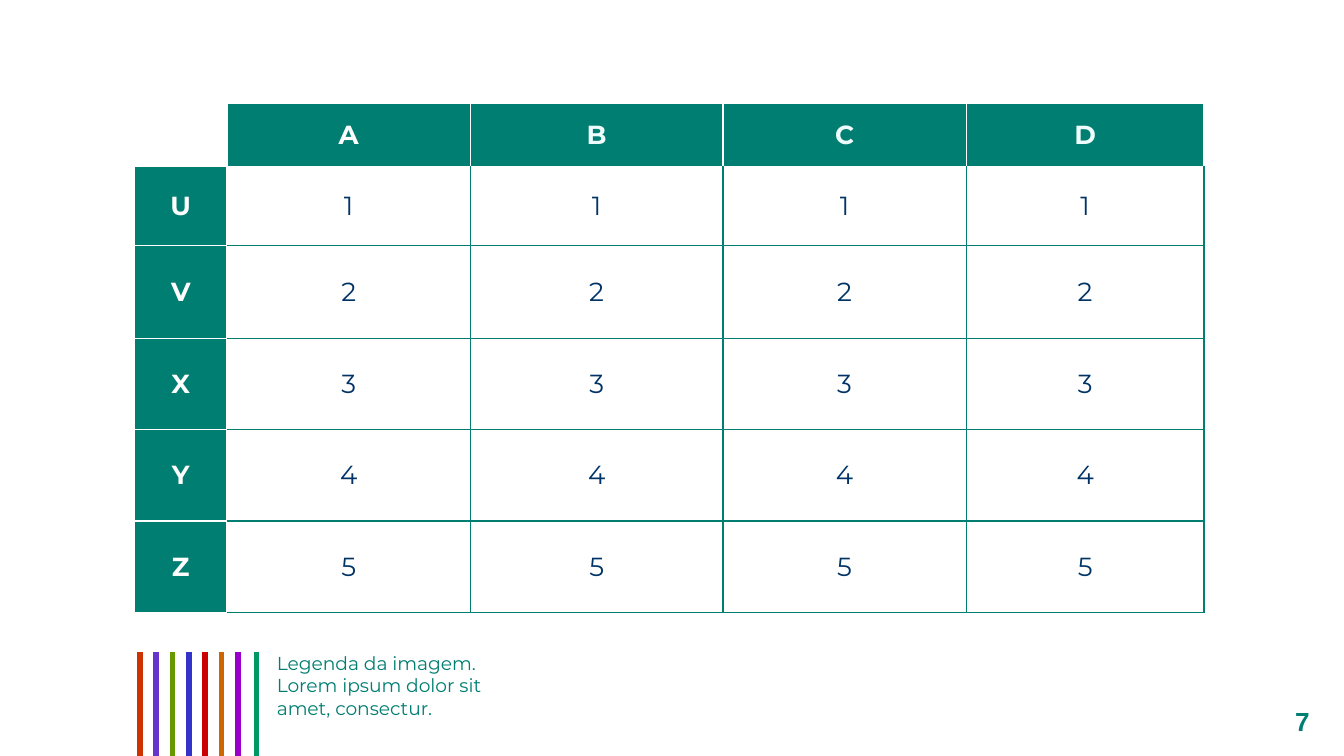
from lxml.etree import SubElement
from pptx import Presentation
from pptx.dml.color import RGBColor
from pptx.enum.shapes import MSO_CONNECTOR as Connector, MSO_SHAPE as Shape
from pptx.enum.text import MSO_ANCHOR as Anchor, PP_ALIGN as Align
from pptx.oxml.ns import qn
from pptx.util import Inches, Pt

TEAL, WHITE, MINT, NAVY = "007E71", "FFFFFF", "EEFCFC", "003366"
COLUMN_WIDTHS = [0.69, 1.81, 1.88, 1.81, 1.77]
ROW_HEIGHTS = [0.44, 0.59, 0.69, 0.68, 0.68, 0.68]
COLUMN_LABELS, ROW_LABELS = "ABCD", "UVXYZ"
STRIPE_COLORS = ["CC3300", "6633CC", "669900", "3333CC", "CC0000", "CC6600", "9900CC"]
LAST_STRIPE_COLOR = "009966"


def color(value):
    """Turn a hex string into a colour."""
    return RGBColor.from_string(value)


def add_run(paragraph, text, size, text_color, font="Montserrat", bold=False):
    """Add one formatted run to a paragraph."""
    run = paragraph.add_run()
    run.text = text
    run.font.size = Pt(size)
    run.font.name = font
    run.font.bold = bold
    run.font.color.rgb = color(text_color)


def set_insets(frame, left, top, right, bottom):
    """Set the four margins of a text frame or a cell."""
    frame.margin_left, frame.margin_top = Inches(left), Inches(top)
    frame.margin_right, frame.margin_bottom = Inches(right), Inches(bottom)


def set_borders(cell, left, right, top, bottom):
    """Draw the four borders of a cell in the given colours."""
    properties = cell._tc.get_or_add_tcPr()
    for side, value in zip("LRTB", (left, right, top, bottom)):
        line = SubElement(properties, qn(f"a:ln{side}"), w=str(Pt(0.75)))
        fill = SubElement(line, qn("a:solidFill"))
        SubElement(fill, qn("a:srgbClr"), val=value)


def format_cell(cell, row, column):
    """Write and format a cell according to its place in the table."""
    set_insets(cell, 0.1, 0.1, 0.1, 0.1)
    cell.vertical_anchor = Anchor.MIDDLE
    paragraph = cell.text_frame.paragraphs[0]
    paragraph.alignment = Align.CENTER
    is_header = row == 0 or column == 0
    if is_header:
        set_borders(cell, WHITE, WHITE, WHITE, WHITE)
        cell.fill.solid()
        cell.fill.fore_color.rgb = color(TEAL if row or column else WHITE)
    else:
        set_borders(cell, WHITE if column == 1 else TEAL, TEAL,
                    WHITE if row == 1 else TEAL, TEAL)
        cell.fill.background()
    if row and column:
        add_run(paragraph, str(row), 14, NAVY)
    elif row:
        add_run(paragraph, ROW_LABELS[row - 1], 14, WHITE, bold=True)
    elif column:
        add_run(paragraph, COLUMN_LABELS[column - 1], 14,
                WHITE if column == 1 else MINT, bold=True)
    else:
        SubElement(paragraph._p, qn("a:endParaRPr"), sz="1600")


def add_data_table(slide, left, top):
    """Add the table with its header row and header column."""
    table = slide.shapes.add_table(
        len(ROW_HEIGHTS), len(COLUMN_WIDTHS), Inches(left), Inches(top),
        Inches(sum(COLUMN_WIDTHS)), Inches(sum(ROW_HEIGHTS))).table
    table.first_row = table.horz_banding = False
    for column, width in zip(table.columns, COLUMN_WIDTHS):
        column.width = Inches(width)
    for row_index, height in enumerate(ROW_HEIGHTS):
        table.rows[row_index].height = Inches(height)
        for column_index in range(len(COLUMN_WIDTHS)):
            format_cell(table.cell(row_index, column_index), row_index, column_index)


def add_stripe(slide, x, top, height, stripe_color):
    """Add one vertical stripe."""
    stripe = slide.shapes.add_connector(
        Connector.STRAIGHT, Inches(x), Inches(top), Inches(x), Inches(top + height))
    stripe.line.color.rgb = color(stripe_color)
    stripe.line.width = Pt(3)
    SubElement(stripe._element.spPr, qn("a:effectLst"))


def add_stripes(slide, left, top, width, height):
    """Add evenly spaced stripes and a last one at the right edge."""
    gap = 0.73 / (len(STRIPE_COLORS) - 1)
    for index, stripe_color in enumerate(STRIPE_COLORS):
        add_stripe(slide, left + index * gap, top, height, stripe_color)
    add_stripe(slide, left + width, top, height, LAST_STRIPE_COLOR)


def add_caption(slide, left, top, width, height):
    """Add the caption beside the stripes."""
    box = slide.shapes.add_textbox(Inches(left), Inches(top), Inches(width), Inches(height))
    frame = box.text_frame
    frame.word_wrap = True
    set_insets(frame, 0, 0, 0, 0.1)
    paragraph = frame.paragraphs[0]
    paragraph.space_after = Pt(10)
    add_run(paragraph, "Legenda da imagem. Lorem ipsum dolor sit amet, consectur.", 10, TEAL)


def add_page_number(slide, left, top, width, height):
    """Add the page number on its white box."""
    box = slide.shapes.add_shape(
        Shape.RECTANGLE, Inches(left), Inches(top), Inches(width), Inches(height))
    box.shadow.inherit = False
    box.fill.solid()
    box.fill.fore_color.rgb = color(WHITE)
    box.line.fill.background()
    frame = box.text_frame
    frame.vertical_anchor = Anchor.MIDDLE
    set_insets(frame, 0.1, 0.1, 0.1, 0.1)
    paragraph = frame.paragraphs[0]
    paragraph.alignment = Align.CENTER
    add_run(paragraph, "7", 14, TEAL, font="Arial", bold=True)


def main():
    """Build the slide and save it."""
    presentation = Presentation()
    presentation.slide_width = Inches(10)
    presentation.slide_height = Inches(10 * 9 / 16)
    slide = presentation.slides.add_slide(presentation.slide_layouts[6])
    add_stripes(slide, 1.04, 4.85, 0.87, 0.78)
    add_page_number(slide, 9.38, 5.1, 0.62, 0.53)
    add_caption(slide, 2.06, 4.85, 1.76, 0.66)
    add_data_table(slide, 1, 0.77)
    presentation.save("out.pptx")


if __name__ == "__main__":
    main()
